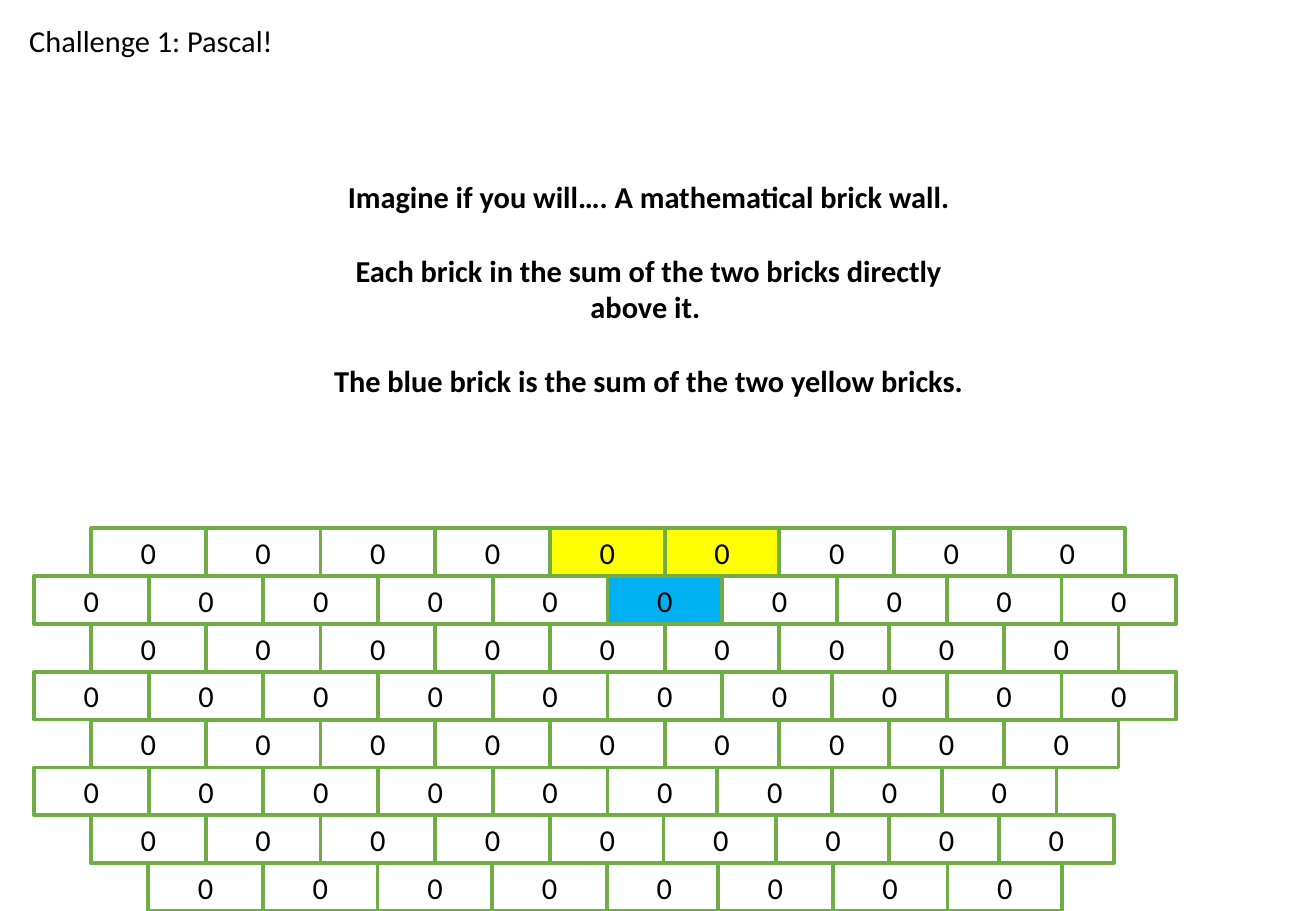
from pptx import Presentation
from pptx.dml.color import RGBColor
from pptx.enum.shapes import MSO_SHAPE
from pptx.enum.text import MSO_ANCHOR, MSO_AUTO_SIZE, PP_ALIGN
from pptx.oxml.ns import qn
from pptx.util import Pt

RECTANGLE = MSO_SHAPE.RECTANGLE
LEFT, CENTER = PP_ALIGN.LEFT, PP_ALIGN.CENTER
TOP, MIDDLE = MSO_ANCHOR.TOP, MSO_ANCHOR.MIDDLE

TITLE = "Challenge 1: Pascal!"
INSTRUCTIONS = [
    "Imagine if you will…. A mathematical brick wall.",
    "Each brick in the sum of the two bricks directly above it. ",
    "The blue brick is the sum of the two yellow bricks.",
]
BRICK_VALUE = "0"
# Each row: left edge, number of bricks, sideways shift that begins at a brick
ROWS = [
    (75, 9, {8: 1}),
    (28, 10, {8: -4}),
    (75, 9, {7: -4}),
    (28, 10, {7: -4}),
    (75, 9, {7: -4}),
    (28, 9, {6: -4, 8: -4}),
    (75, 9, {5: -1, 6: -2, 7: -1, 8: -4}),
    (122, 8, {5: -3}),
]
HIGHLIGHTS = {(0, 4): "yellow", (0, 5): "yellow", (1, 5): "blue"}
COLORS = {
    "black": "000000",
    "white": "FFFFFF",
    "yellow": "FFFF00",
    "blue": "00B0F0",
    "green": "70AD47",
}

EMU_PER_PX = 9144  # 100 px to the inch
SLIDE_SIZE = (1083, 750)
TITLE_BOX = (14, 13, 223, 40)
INSTRUCTIONS_BOX = (263, 142, 542, 192)
WALL_TOP = 435
BRICK_WIDTH = 944 / 10
BRICK_HEIGHT = (SLIDE_SIZE[1] - WALL_TOP) / len(ROWS)


def emu(px):
    return round(px * EMU_PER_PX)


def color(name):
    return RGBColor.from_string(COLORS[name])


def place(shape, box):
    for name, px in zip(("left", "top", "width", "height"), box):
        setattr(shape, name, emu(px))


def write(shape, lines, alignment, anchor, bold=False, wrap=True, gap=0):
    frame = shape.text_frame
    frame.text = "\n".join(lines)
    frame_format = {
        "auto_size": MSO_AUTO_SIZE.NONE,
        "word_wrap": wrap,
        "vertical_anchor": anchor,
    }
    for name, value in frame_format.items():
        setattr(frame, name, value)
    for index, paragraph in enumerate(frame.paragraphs):
        paragraph.alignment = alignment
        paragraph.space_before = Pt(gap if index else 0)
        font_format = {"name": "Calibri", "size": Pt(18), "bold": bold}
        for name, value in font_format.items():
            setattr(paragraph.runs[0].font, name, value)
        paragraph.runs[0].font.color.rgb = color("black")


def remove_bullets(shape):
    for paragraph in shape.text_frame.paragraphs:
        properties = paragraph._p.get_or_add_pPr()
        properties.set("marL", "0")
        properties.set("indent", "0")
        properties.append(properties.makeelement(qn("a:buNone"), {}))


def add_brick(slide, box, fill_name):
    brick = slide.shapes.add_shape(RECTANGLE, *map(emu, box))
    brick.shadow.inherit = False
    brick.fill.solid()
    brick.fill.fore_color.rgb = color(fill_name)
    brick.line.color.rgb = color("green")
    brick.line.width = Pt(2.25)
    write(brick, [BRICK_VALUE], CENTER, MIDDLE)


def add_wall(slide):
    for row, (left, count, shifts) in enumerate(ROWS):
        top = WALL_TOP + row * BRICK_HEIGHT
        for column in range(count):
            left += shifts.get(column, 0)
            box = (left + column * BRICK_WIDTH, top, BRICK_WIDTH, BRICK_HEIGHT)
            add_brick(slide, box, HIGHLIGHTS.get((row, column), "white"))


def main():
    presentation = Presentation()
    presentation.slide_width, presentation.slide_height = map(emu, SLIDE_SIZE)
    slide = presentation.slides.add_slide(presentation.slide_layouts[1])

    title, instructions = slide.placeholders
    place(title, TITLE_BOX)
    write(title, [TITLE], LEFT, TOP, wrap=False)
    place(instructions, INSTRUCTIONS_BOX)
    write(instructions, INSTRUCTIONS, CENTER, TOP, bold=True, gap=22)
    remove_bullets(instructions)

    add_wall(slide)
    presentation.save("out.pptx")


if __name__ == "__main__":
    main()
